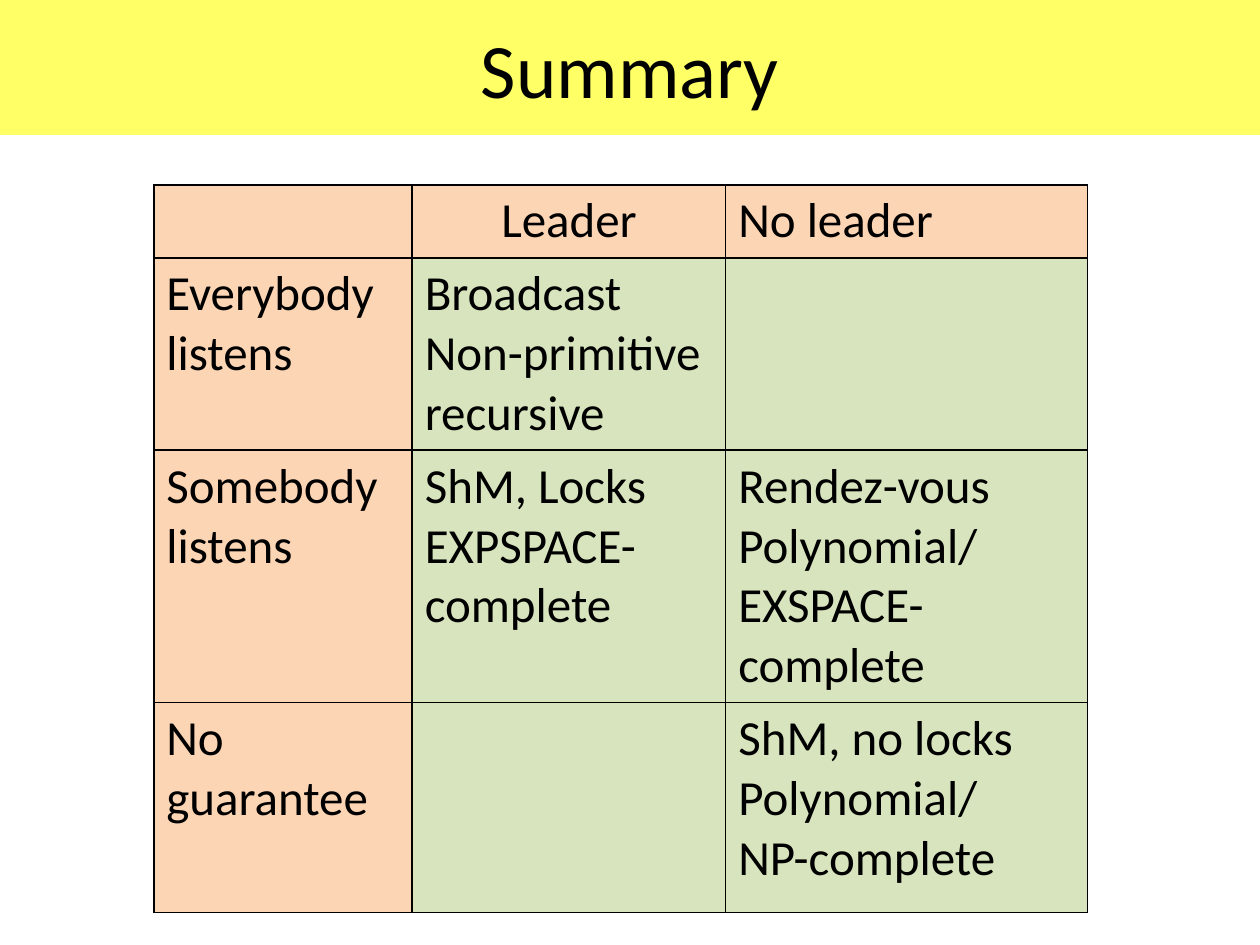
import lxml.etree
import pptx
import pptx.dml.color
import pptx.enum.text
import pptx.oxml.ns
import pptx.util

Cm = pptx.util.Cm
ALIGN = pptx.enum.text.PP_ALIGN
ANCHOR = pptx.enum.text.MSO_ANCHOR

BLACK, YELLOW, PEACH, GREEN = "000000", "FFFF66", "FCD5B5", "D7E4BD"
WIDTHS = [5.21, 6.32, 7.29]
HEIGHTS = [1.47, 3.61, 4.72, 4.24]
ROWS = [
    ["", "Leader", "No leader"],
    ["Everybody listens", "Broadcast\nNon-primitive recursive", ""],
    ["Somebody listens", "ShM, Locks\nEXPSPACE-complete",
     "Rendez-vous\nPolynomial/ EXSPACE-complete"],
    ["No guarantee", "", "ShM, no locks\nPolynomial/\nNP-complete"],
]


def paint(fill, color):
    fill.solid()
    fill.fore_color.rgb = pptx.dml.color.RGBColor.from_string(color)


def style(frame, size, align):
    for para in frame.paragraphs:
        para.alignment = align
        para.font.name = "Calibri"
        para.font.size = pptx.util.Pt(size)
        paint(para.font.fill, BLACK)


def border(cell, color, width):
    props = cell._tc.get_or_add_tcPr()
    qn = pptx.oxml.ns.qn
    for side in ("L", "R", "T", "B"):
        line = lxml.etree.SubElement(props, qn(f"a:ln{side}"),
                                     w=str(pptx.util.Pt(width)))
        fill = lxml.etree.SubElement(line, qn("a:solidFill"))
        lxml.etree.SubElement(fill, qn("a:srgbClr"), val=color)


def add_title(slide, text, width):
    title = slide.shapes.title
    title.left, title.top = Cm(0), Cm(0)
    title.width, title.height = width, Cm(2.72)
    paint(title.fill, YELLOW)
    frame = title.text_frame
    frame.text = text
    frame.vertical_anchor = ANCHOR.MIDDLE
    style(frame, 44, ALIGN.CENTER)


def add_grid(slide, left, top):
    frame = slide.shapes.add_table(
        len(HEIGHTS), len(WIDTHS), Cm(left), Cm(top),
        Cm(sum(WIDTHS)), Cm(sum(HEIGHTS)))
    table = frame.table
    table.first_row = table.horz_banding = False
    for col, width in zip(table.columns, WIDTHS):
        col.width = Cm(width)
    for row, height in zip(table.rows, HEIGHTS):
        row.height = Cm(height)
    for r, row in enumerate(ROWS):
        for c, text in enumerate(row):
            cell = table.cell(r, c)
            cell.text = text
            # Only the "Leader" heading is centred
            style(cell.text_frame, 28,
                  ALIGN.CENTER if (r, c) == (0, 1) else ALIGN.LEFT)
            border(cell, BLACK, 1)
            # Headings are peach, results are green
            paint(cell.fill, PEACH if r == 0 or c == 0 else GREEN)


def main():
    deck = pptx.Presentation()
    deck.slide_width, deck.slide_height = Cm(25.4), Cm(19.05)
    slide = deck.slides.add_slide(deck.slide_layouts[5])
    add_title(slide, "Summary", deck.slide_width)
    add_grid(slide, 3.1, 3.73)
    deck.save("out.pptx")


if __name__ == "__main__":
    main()
